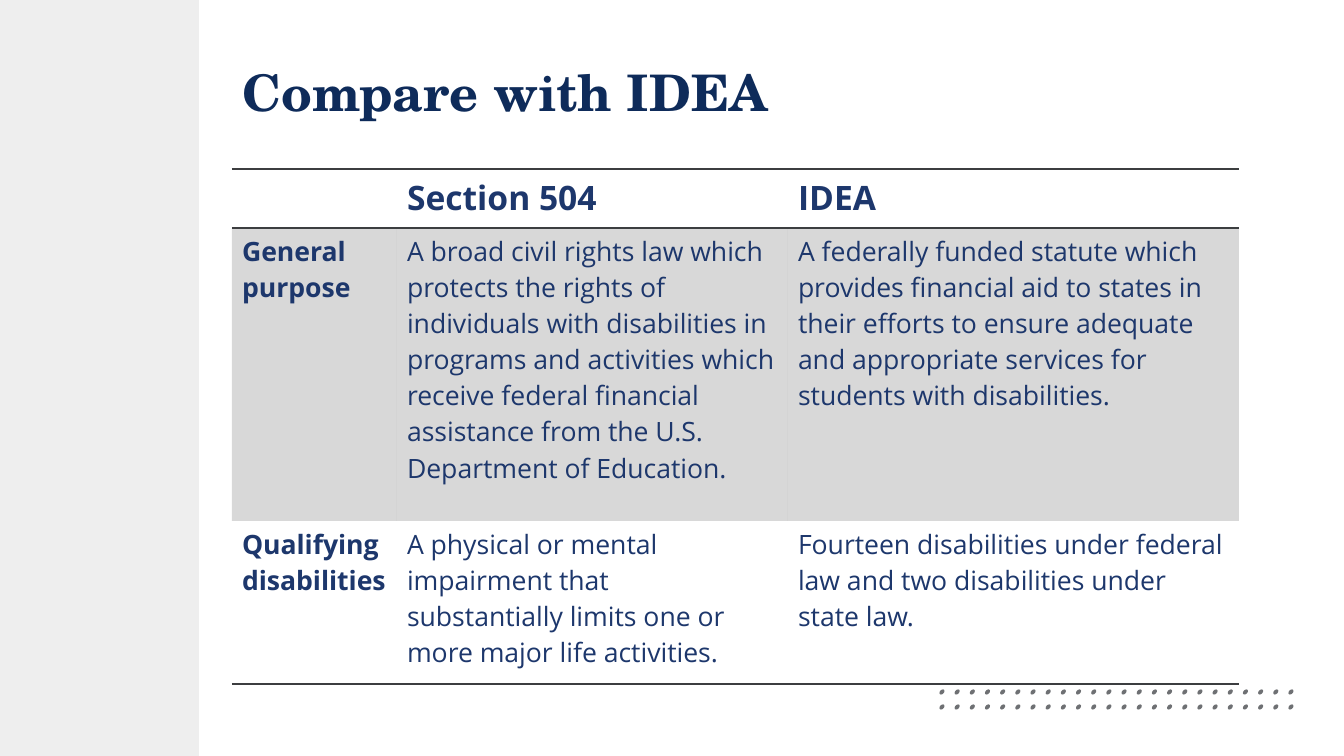
"""Build the slide that compares Section 504 with IDEA."""
from lxml import etree
from pptx import Presentation, util as u
from pptx.dml.color import RGBColor
from pptx.enum import shapes, text
from pptx.oxml.ns import qn

TITLE = "Compare with IDEA"
ROWS = [
    [[], ["Section 504"], ["IDEA"]],
    [["General purpose"],
     ["A broad civil rights law which protects the rights of individuals with "
      "disabilities in programs and activities which receive federal financial "
      "assistance from the U.S. Department of Education."],
     ["A federally funded statute which provides financial aid to states in their "
      "efforts to ensure adequate and appropriate services for students with "
      "disabilities."]],
    [["Qualifying disabilities"],
     ["A physical or mental impairment that",
      "substantially limits one or more major life activities."],
     ["Fourteen disabilities under federal law and two disabilities under state law."]],
]
WIDTHS = [165, 391, 451]
HEIGHTS = [59, 293, 163]
RULES = {0, 1, 3}
SHADED = 1
DOTS = {"cols": 24, "left": 939, "right": 1288, "tops": [690, 705]}
HEX = {"side": "EEEEEE", "dot": "6E7073", "title": "0E2B5A",
       "body": "1D376C", "rule": "3C3E40"}
HEAD, BODY = "TeX Gyre Schola", "Open Sans"


def px(n):
    return round(n * 914400 / 100.8)


def color(name):
    return RGBColor.from_string(HEX[name])


def write(para, words, font, size, tint, bold):
    run = para.add_run()
    run.text = words
    run.font.name, run.font.size, run.font.bold = font, u.Pt(size), bold
    run.font.color.rgb = color(tint)


def draw(slide, kind, box, tint):
    shape = slide.shapes.add_shape(kind, *map(px, box))
    shape.shadow.inherit = False
    shape.fill.solid()
    shape.fill.fore_color.rgb = color(tint)
    shape.line.fill.background()
    return shape


def border(cell, row):
    props = cell._tc.get_or_add_tcPr()
    ruled = {"T": row in RULES, "B": row + 1 in RULES}
    for side in "LRTB":
        line = etree.SubElement(props, qn(f"a:ln{side}"), w=str(u.Pt(1)))
        if ruled.get(side):
            fill = etree.SubElement(line, qn("a:solidFill"))
            etree.SubElement(fill, qn("a:srgbClr"), val=HEX["rule"])
        else:
            etree.SubElement(line, qn("a:noFill"))


def shade(cell):
    cell.fill.solid()
    cell.fill.fore_color.rgb = color("rule")
    tone = cell._tc.tcPr.find(".//" + qn("a:solidFill") + "[last()]")
    tone = cell._tc.tcPr.findall(qn("a:solidFill"))[0][0]
    etree.SubElement(tone, qn("a:alpha"), val="20000")


def fill_table(slide):
    box = map(px, (232, 169, sum(WIDTHS), sum(HEIGHTS)))
    table = slide.shapes.add_table(len(ROWS), len(WIDTHS), *box).table
    for col, width in zip(table.columns, WIDTHS):
        col.width = px(width)
    for r, (row, height) in enumerate(zip(ROWS, HEIGHTS)):
        table.rows[r].height = px(height)
        for c, paras in enumerate(row):
            cell = table.cell(r, c)
            border(cell, r)
            if r == SHADED:
                shade(cell)
            else:
                cell.fill.background()
            frame = cell.text_frame
            for i, words in enumerate(paras):
                para = frame.add_paragraph() if i else frame.paragraphs[0]
                write(para, words, BODY, 19 if r else 24, "body", r == 0 or c == 0)


def main():
    deck = Presentation()
    deck.slide_width, deck.slide_height = px(1344), px(756)
    slide = deck.slides.add_slide(deck.slide_layouts[5])
    draw(slide, shapes.MSO_SHAPE.RECTANGLE, (0, 0, 199, 756), "side")

    step = (DOTS["right"] - DOTS["left"]) / (DOTS["cols"] - 1)
    for top in DOTS["tops"]:
        for i in range(DOTS["cols"]):
            box = (DOTS["left"] + i * step, top, 6, 4)
            draw(slide, shapes.MSO_SHAPE.OVAL, box, "dot").rotation = 314.4

    title = slide.shapes.title
    title.left, title.top, title.width, title.height = map(px, (232, 25, 1059, 133))
    title.text_frame.vertical_anchor = text.MSO_ANCHOR.MIDDLE
    para = title.text_frame.paragraphs[0]
    para.alignment = text.PP_ALIGN.LEFT
    write(para, TITLE, HEAD, 36, "title", True)

    fill_table(slide)
    deck.save("out.pptx")


if __name__ == "__main__":
    main()
